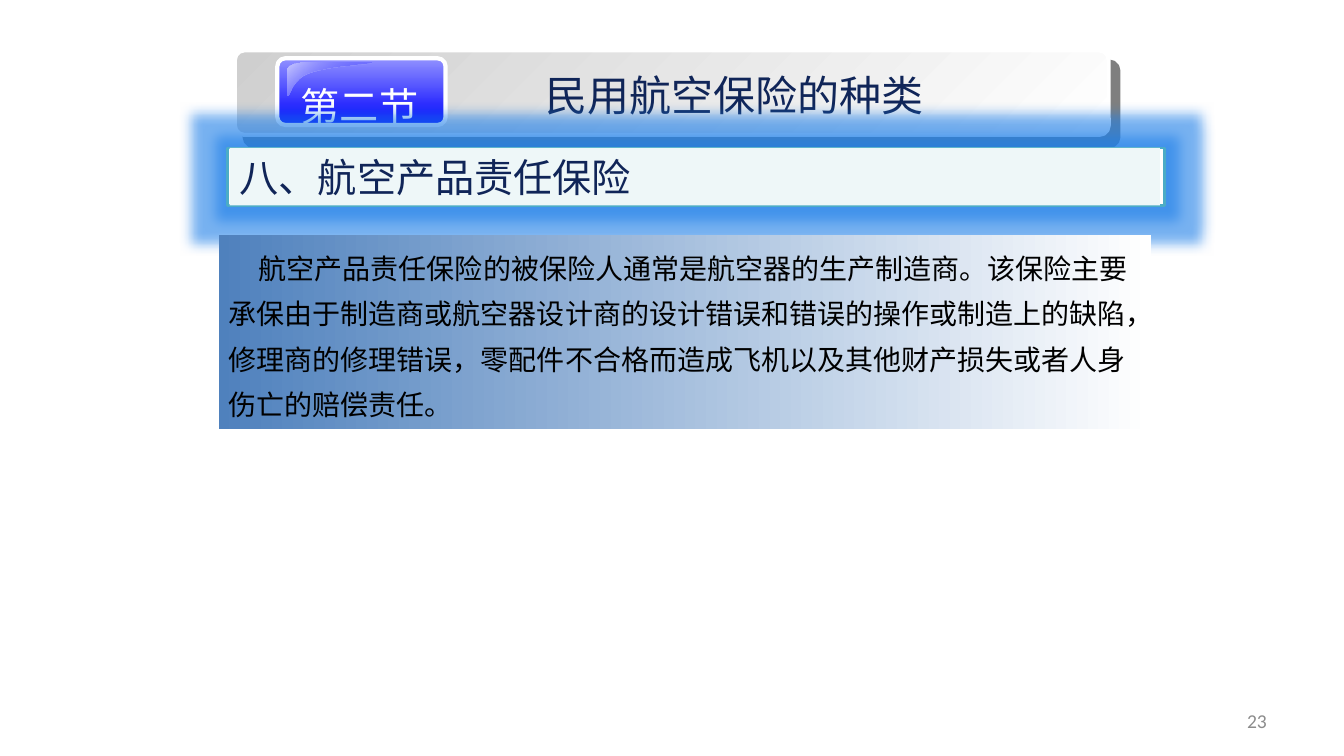
from lxml import etree
from pptx import Presentation
from pptx.dml.color import RGBColor
from pptx.enum.shapes import MSO_SHAPE
from pptx.enum.text import MSO_ANCHOR, MSO_AUTO_SIZE, PP_ALIGN
from pptx.oxml.ns import qn
from pptx.util import Cm, Pt

RECTANGLE = MSO_SHAPE.RECTANGLE
ROUNDED = MSO_SHAPE.ROUNDED_RECTANGLE
TOP, MIDDLE = MSO_ANCHOR.TOP, MSO_ANCHOR.MIDDLE
GROW, FIXED = MSO_AUTO_SIZE.SHAPE_TO_FIT_TEXT, MSO_AUTO_SIZE.NONE
LEFT, CENTER, RIGHT = PP_ALIGN.LEFT, PP_ALIGN.CENTER, PP_ALIGN.RIGHT

WHITE = RGBColor(0xFF, 0xFF, 0xFF)
BLACK = RGBColor(0x00, 0x00, 0x00)
NAVY = RGBColor(0x10, 0x25, 0x58)
SILVER = RGBColor(0xCF, 0xCF, 0xCF)
GRAY = RGBColor(0x8C, 0x8C, 0x8C)
BLUE = RGBColor(0x00, 0x00, 0xFF)
LIGHT_BLUE = RGBColor(0x91, 0x91, 0xFF)
PALE_BLUE = RGBColor(0xC9, 0xC9, 0xFF)
STEEL_BLUE = RGBColor(0x4F, 0x81, 0xBD)
GLOW_BLUE = RGBColor(0x1F, 0x7F, 0xE8)
TEAL = RGBColor(0x4B, 0xAC, 0xC6)
MINT = RGBColor(0xEE, 0xF7, 0xF8)


def curve(start, control_1, control_2, end, steps=12):
    """Points along a cubic curve, without its start."""
    points = []
    for step in range(1, steps + 1):
        t = step / steps
        weights = ((1 - t) ** 3, 3 * t * (1 - t) ** 2, 3 * t * t * (1 - t), t ** 3)
        corners = (start, control_1, control_2, end)
        points.append(tuple(sum(w * corner[axis] for w, corner in zip(weights, corners))
                            for axis in (0, 1)))
    return points


class SlideBuilder:
    font = "Arial"

    def __init__(self, slide):
        self.slide = slide

    def paint(self, shape, fill, angle=0, line=None, line_width=0):
        """Fill with one colour, or with a gradient when given a list of two."""
        shape.shadow.inherit = False
        if isinstance(fill, list):
            shape.fill.gradient()
            shape.fill.gradient_angle = (360 - angle) % 360
            for stop, color in zip(shape.fill.gradient_stops, fill):
                stop.color.rgb = color
        else:
            shape.fill.solid()
            shape.fill.fore_color.rgb = fill
        if line is None:
            shape.line.fill.background()
        else:
            shape.line.color.rgb = line
            shape.line.width = Pt(line_width)

    def box(self, kind, bounds, fill, corner=None, **paint):
        shape = self.slide.shapes.add_shape(kind, *map(Cm, bounds))
        if corner is not None:
            shape.adjustments[0] = corner
        self.paint(shape, fill, **paint)
        return shape

    def freeform(self, points, fill, **paint):
        corners = [(Cm(x), Cm(y)) for x, y in points]
        builder = self.slide.shapes.build_freeform(*corners[0])
        builder.add_line_segments(corners[1:], close=True)
        shape = builder.convert_to_shape()
        self.paint(shape, fill, **paint)
        return shape

    def text(self, shape, words, size, color, align=LEFT, font=None,
             anchor=TOP, wrap=True, grow=GROW, spacing=1.0):
        frame = shape.text_frame
        frame.text = words
        paragraph = frame.paragraphs[0]
        run = paragraph.runs[0]
        run.font.color.rgb = color
        formats = {
            frame: {"word_wrap": wrap, "auto_size": grow, "vertical_anchor": anchor},
            paragraph: {"alignment": align, "line_spacing": spacing},
            run.font: {"name": font or self.font, "size": Pt(size), "bold": False},
        }
        for target, values in formats.items():
            for name, value in values.items():
                setattr(target, name, value)
        return run

    def text_box(self, bounds, words, size, color, **style):
        shape = self.slide.shapes.add_textbox(*map(Cm, bounds))
        return self.text(shape, words, size, color, **style)

    def title(self, bounds, words, size, color, **style):
        shape = self.slide.shapes.title
        for name, value in zip(("left", "top", "width", "height"), bounds):
            setattr(shape, name, Cm(value))
        self.slide.shapes._spTree.append(shape._element)  # above the banner
        return self.text(shape, words, size, color, **style)

    def effect(self, effects, kind, color, opacity, **attributes):
        element = etree.SubElement(effects, qn(f"a:{kind}"))
        for name, value in attributes.items():
            element.set(name, str(int(value)) if name != "algn" else value)
        tint = etree.SubElement(element, qn("a:srgbClr"), val=str(color))
        etree.SubElement(tint, qn("a:alpha"), val=str(opacity * 1000))

    def shape_effect(self, shape, kind, color, opacity, **attributes):
        effects = shape._element.spPr.find(qn("a:effectLst"))
        self.effect(effects, kind, color, opacity, **attributes)

    def text_shadow(self, run, color):
        effects = etree.Element(qn("a:effectLst"))
        run._r.rPr.find(qn("a:solidFill")).addnext(effects)
        self.effect(effects, "outerShdw", color, 100, dist=Pt(2), dir=45 * 60000)


def main():
    presentation = Presentation()
    presentation.slide_width, presentation.slide_height = Cm(33.87), Cm(19.05)
    slide = presentation.slides.add_slide(presentation.slide_layouts[5])
    builder = SlideBuilder(slide)

    # Page number
    builder.text_box((24.28, 17.65, 7.9, 1.02), "23", 14, GRAY, align=RIGHT,
                     font="Calibri", anchor=MIDDLE, grow=FIXED)

    # Title banner
    banner = builder.box(ROUNDED, (5.92, 1.27, 22.02, 2.13), [SILVER, WHITE],
                         corner=0.109, angle=45, line=WHITE, line_width=3)
    builder.shape_effect(banner, "outerShdw", BLACK, 50, dist=Pt(10.6),
                         dir=49 * 60000, algn="ctr", rotWithShape=0)
    builder.title((10.42, 1.63, 16.18, 1.52), "民用航空保险的种类", 30, NAVY, align=CENTER)

    # Section badge with its highlight
    builder.box(ROUNDED, (6.99, 1.47, 4.24, 1.68), [LIGHT_BLUE, BLUE],
                corner=0.119, angle=90, line=WHITE, line_width=3)
    top_left, left_top, left_bottom = (7.67, 1.57), (7.24, 1.75), (7.24, 2.41)
    middle, top_right = (7.82, 1.83), (9.35, 1.57)
    outline = [top_left]
    outline += curve(top_left, (7.44, 1.57), (7.24, 1.65), left_top)
    outline += [left_bottom]
    outline += curve(left_bottom, (7.34, 2.41), (7.29, 2.03), middle)
    outline += curve(middle, (8.36, 1.65), (9.37, 1.63), top_right)
    highlight = builder.freeform(outline, [PALE_BLUE, BLUE], angle=45)
    last_color = highlight._element.spPr.findall(".//" + qn("a:gs"))[-1][0]
    etree.SubElement(last_color, qn("a:alpha"), val="0")
    section = builder.text_box((7.32, 1.96, 3.48, 1.45), "第二节", 28, WHITE,
                               align=CENTER, wrap=False)
    builder.text_shadow(section, BLACK)

    # Glowing heading
    frame = builder.box(RECTANGLE, (5.74, 3.73, 23.6, 1.45), WHITE, line=TEAL, line_width=2)
    builder.shape_effect(frame, "glow", GLOW_BLUE, 60, rad=Pt(18))
    heading = builder.box(RECTANGLE, (5.79, 3.73, 23.44, 1.45), MINT)
    builder.text(heading, "八、航空产品责任保险", 28, NAVY)

    # Explanation
    body = builder.box(RECTANGLE, (5.51, 5.92, 23.5, 4.88), [STEEL_BLUE, WHITE])
    builder.text(body, "航空产品责任保险的被保险人通常是航空器的生产制造商。该保险主要承保由于制造商或"
                 "航空器设计商的设计错误和错误的操作或制造上的缺陷，修理商的修理错误，零配件不合格而"
                 "造成飞机以及其他财产损失或者人身伤亡的赔偿责任。",
                 20, BLACK, font="Times New Roman", spacing=1.35)
    body.text_frame.paragraphs[0]._p.get_or_add_pPr().set("indent", str(int(Cm(0.76))))

    presentation.save("out.pptx")


if __name__ == "__main__":
    main()
